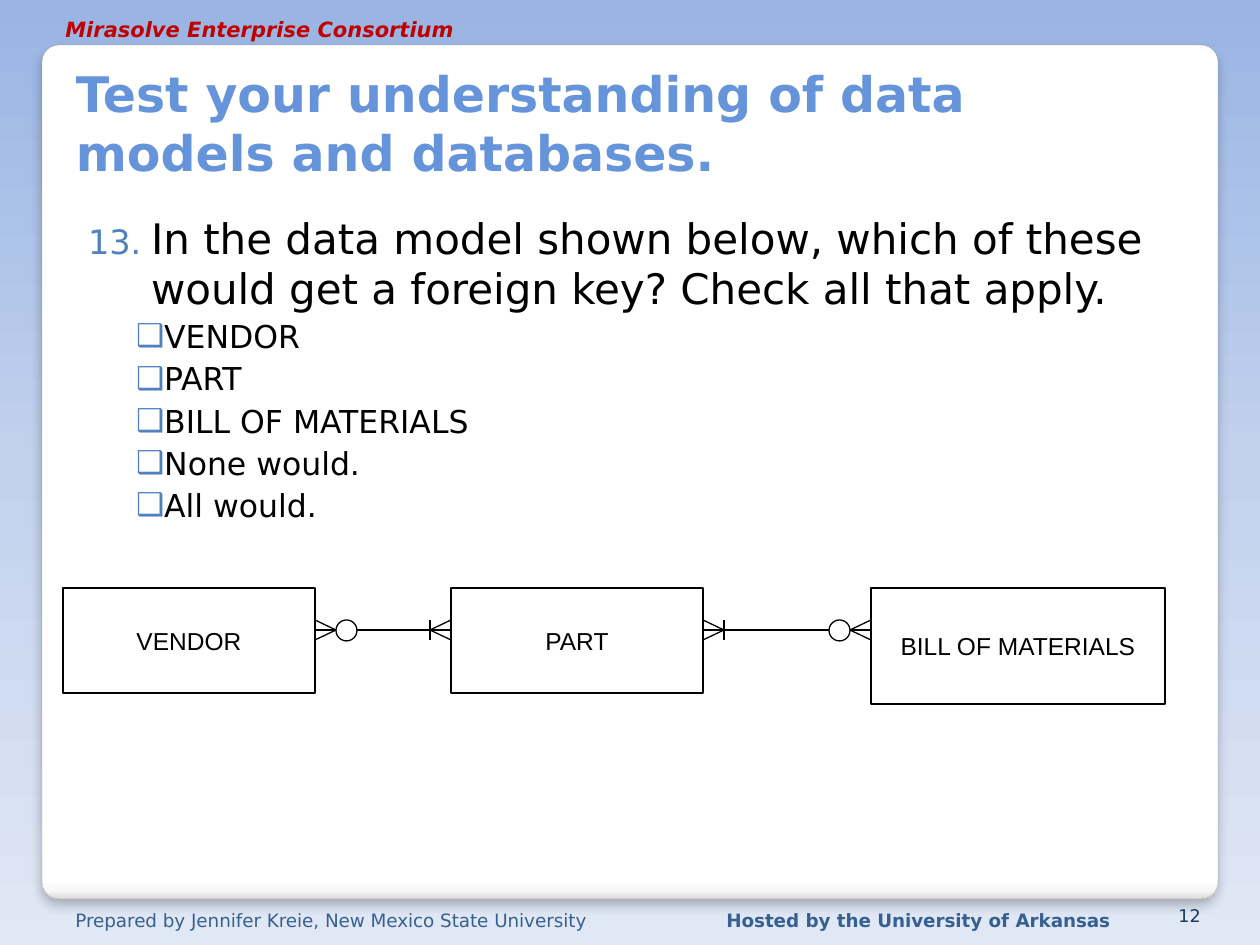
import pptx
import pptx.dml.color
import pptx.enum.shapes
import pptx.enum.text
import pptx.oxml
import pptx.oxml.ns
import pptx.util

PIXEL = 914400 / 126
SHAPE = pptx.enum.shapes.MSO_SHAPE
ANCHOR = pptx.enum.text.MSO_ANCHOR
ALIGN = pptx.enum.text.PP_ALIGN

COLOURS = {
    "sky_top": "9AB5E4", "sky_middle": "C2D1ED", "sky_bottom": "E1E8F5",
    "white": "FFFFFF", "panel_fade": "F7F7F7", "panel_edge": "DADADA",
    "panel_line": "A4A4A4", "title": "6594DA", "bullet": "4F81BD",
    "footer": "376092", "header": "C00000", "number": "17375E", "black": "000000",
}
SANS = "DejaVu Sans"
CHOICES = ["VENDOR", "PART", "BILL OF MATERIALS", "None would.", "All would."]
ENTITY_TOP = 588
RELATION_Y = 630
SYMBOL = 21  # length of a crow's foot and diameter of a circle
SPREAD = 10  # half the height of a crow's foot


def px(*lengths):
    return [pptx.util.Emu(round(length * PIXEL)) for length in lengths]


def colour(name):
    return pptx.dml.color.RGBColor.from_string(COLOURS[name])


def set_values(target, values):
    for name, value in values.items():
        setattr(target, name, value)


def add_xml(parent, tag, content):
    """Append an element of the a: namespace, written from its tag onwards."""
    namespace = pptx.oxml.ns.nsdecls("a")
    parent.append(pptx.oxml.parse_xml(f"<a:{tag} {namespace}{content}"))


def write(para, text, colour_name, **font_values):
    span = para.add_run()
    span.text = text
    span.font.color.rgb = colour(colour_name)
    font_values["size"] = pptx.util.Pt(font_values["size"])
    set_values(span.font, {"name": SANS, **font_values})


def paint_gradient(fill, element, stops):
    """Fill from top to bottom with (percent, colour name) stops."""
    fill.gradient()
    fill.gradient_angle = 270
    stop_list = element.xpath(".//a:gsLst")[0]
    for stop in list(stop_list):
        stop_list.remove(stop)
    for percent, name in stops:
        add_xml(stop_list, "gs",
                f' pos="{percent * 1000}"><a:srgbClr val="{COLOURS[name]}"/></a:gs>')


def add_panel(page):
    panel = page.shapes.add_shape(SHAPE.ROUNDED_RECTANGLE, *px(42, 45, 1176, 854))
    panel.adjustments[0] = 0.02
    paint_gradient(panel.fill, panel.element,
                   [(0, "white"), (98, "white"), (99, "panel_fade"), (100, "panel_edge")])
    panel.line.color.rgb = colour("panel_line")
    panel.line.width = pptx.util.Pt(0.16)
    panel.shadow.inherit = False
    blur, distance = pptx.util.Pt(6), pptx.util.Pt(4)
    add_xml(panel.element.xpath(".//a:effectLst")[0], "outerShdw",
            f' blurRad="{blur}" dist="{distance}" dir="5400000" rotWithShape="0">'
            f'<a:srgbClr val="{COLOURS["black"]}"><a:alpha val="25000"/></a:srgbClr>'
            '</a:outerShdw>')
    page.shapes.element.insert(2, panel.element)  # behind the placeholders


def add_label(page, bounds, text, colour_name, align=ALIGN.LEFT, anchor=ANCHOR.TOP,
              **font_values):
    frame = page.shapes.add_textbox(*px(*bounds)).text_frame
    set_values(frame, {"word_wrap": True, "vertical_anchor": anchor})
    frame.paragraphs[0].alignment = align
    write(frame.paragraphs[0], text, colour_name, **font_values)


def place(placeholder, bounds, anchor, insets):
    sides = ["left", "top", "width", "height"]
    set_values(placeholder, dict(zip(sides, px(*bounds))))
    margins = ["margin_left", "margin_top", "margin_right", "margin_bottom"]
    set_values(placeholder.text_frame, {
        "word_wrap": True, "vertical_anchor": anchor,
        "auto_size": pptx.enum.text.MSO_AUTO_SIZE.NONE,
        **dict(zip(margins, px(*insets)))})


def add_title(page):
    title = page.shapes.title
    place(title, (63, 42, 1127, 145), ANCHOR.BOTTOM, (13, 6, 13, 6))
    para = title.text_frame.paragraphs[0]
    para.alignment = ALIGN.LEFT
    write(para, "Test your understanding of data models and databases.",
          "title", size=28, bold=True)


def format_item(para, level, margin, hang, size_percent, mark, content):
    set_values(para, {"level": level, "space_before": pptx.util.Pt(2.5),
                      "alignment": ALIGN.LEFT})
    properties = para._p.get_or_add_pPr()
    for name, length in zip(("marL", "indent"), px(margin, -hang)):
        properties.set(name, str(length))
    add_xml(properties, "buClr", f'><a:srgbClr val="{COLOURS["bullet"]}"/></a:buClr>')
    add_xml(properties, "buSzPct", f' val="{size_percent * 1000}"/>')
    add_xml(properties, "buFont", f' typeface="{SANS}"/>')
    add_xml(properties, mark, content)


def add_question(page):
    body = page.placeholders[1]
    place(body, (63, 199, 1124, 451), ANCHOR.TOP, (25, 13, 13, 6))
    frame = body.text_frame
    question = frame.paragraphs[0]
    format_item(question, 0, 63, 63, 80, "buAutoNum", ' type="arabicPeriod" startAt="13"/>')
    write(question, "In the data model shown below, which of these would get a "
          "foreign key? Check all that apply.", "black", size=24)
    for choice in CHOICES:
        para = frame.add_paragraph()
        format_item(para, 1, 76, 28, 100, "buChar", ' char="❑"/>')
        write(para, choice, "black", size=18)


def outline(shape):
    shape.line.color.rgb = colour("black")
    shape.line.width = pptx.util.Pt(0.75)


def add_outlined(page, kind, *bounds):
    shape = page.shapes.add_shape(kind, *px(*bounds))
    shape.shadow.inherit = False
    shape.fill.background()
    outline(shape)
    return shape


def add_entity(page, left, width, height, text):
    box = add_outlined(page, SHAPE.RECTANGLE, left, ENTITY_TOP, width, height)
    set_values(box.text_frame, {"word_wrap": False, "vertical_anchor": ANCHOR.MIDDLE})
    para = box.text_frame.paragraphs[0]
    para.alignment = ALIGN.CENTER
    write(para, text, "black", size=14, name="Arial")


def add_line(page, *ends):
    line = page.shapes.add_connector(pptx.enum.shapes.MSO_CONNECTOR.STRAIGHT, *px(*ends))
    outline(line)
    add_xml(line.element.spPr, "effectLst", "/>")


def add_many_end(page, edge, direction, optional):
    """Draw a crow's foot with a circle or a bar; return where its line starts."""
    tip = edge + direction * SYMBOL
    for offset in (-SPREAD, 0, SPREAD):
        add_line(page, tip, RELATION_Y, edge, RELATION_Y + offset)
    if not optional:
        add_line(page, tip, RELATION_Y - SPREAD, tip, RELATION_Y + SPREAD)
        return tip
    outer = tip + direction * SYMBOL
    add_outlined(page, SHAPE.OVAL, min(tip, outer), RELATION_Y - SPREAD, SYMBOL, SYMBOL)
    return outer


def add_relation(page, left_edge, left_optional, right_edge, right_optional):
    start = add_many_end(page, left_edge, 1, left_optional)
    end = add_many_end(page, right_edge, -1, right_optional)
    add_line(page, start, RELATION_Y, end, RELATION_Y)


def main():
    deck = pptx.Presentation()
    deck.slide_width, deck.slide_height = px(1260, 945)
    page = deck.slides.add_slide(deck.slide_layouts[1])
    paint_gradient(page.background.fill, page.element,
                   [(0, "sky_top"), (50, "sky_middle"), (100, "sky_bottom")])
    add_panel(page)
    add_label(page, (63, 903, 562, 29),
              "Prepared by Jennifer Kreie, New Mexico State University", "footer", size=10.5)
    add_label(page, (714, 903, 420, 29), "Hosted by the University of Arkansas",
              "footer", size=10.5, bold=True)
    add_label(page, (53, 10, 420, 29), "Mirasolve Enterprise Consortium",
              "header", size=12, bold=True, italic=True)
    add_title(page)
    add_question(page)
    add_label(page, (1150, 903, 63, 29), "12", "number", ALIGN.RIGHT, ANCHOR.BOTTOM, size=10)
    add_entity(page, 63, 252, 105, "VENDOR")
    add_entity(page, 451, 252, 105, "PART")
    add_entity(page, 871, 294, 116, "BILL OF MATERIALS")
    add_relation(page, 315, True, 451, False)
    add_relation(page, 703, False, 871, True)
    deck.save("out.pptx")


if __name__ == "__main__":
    main()
